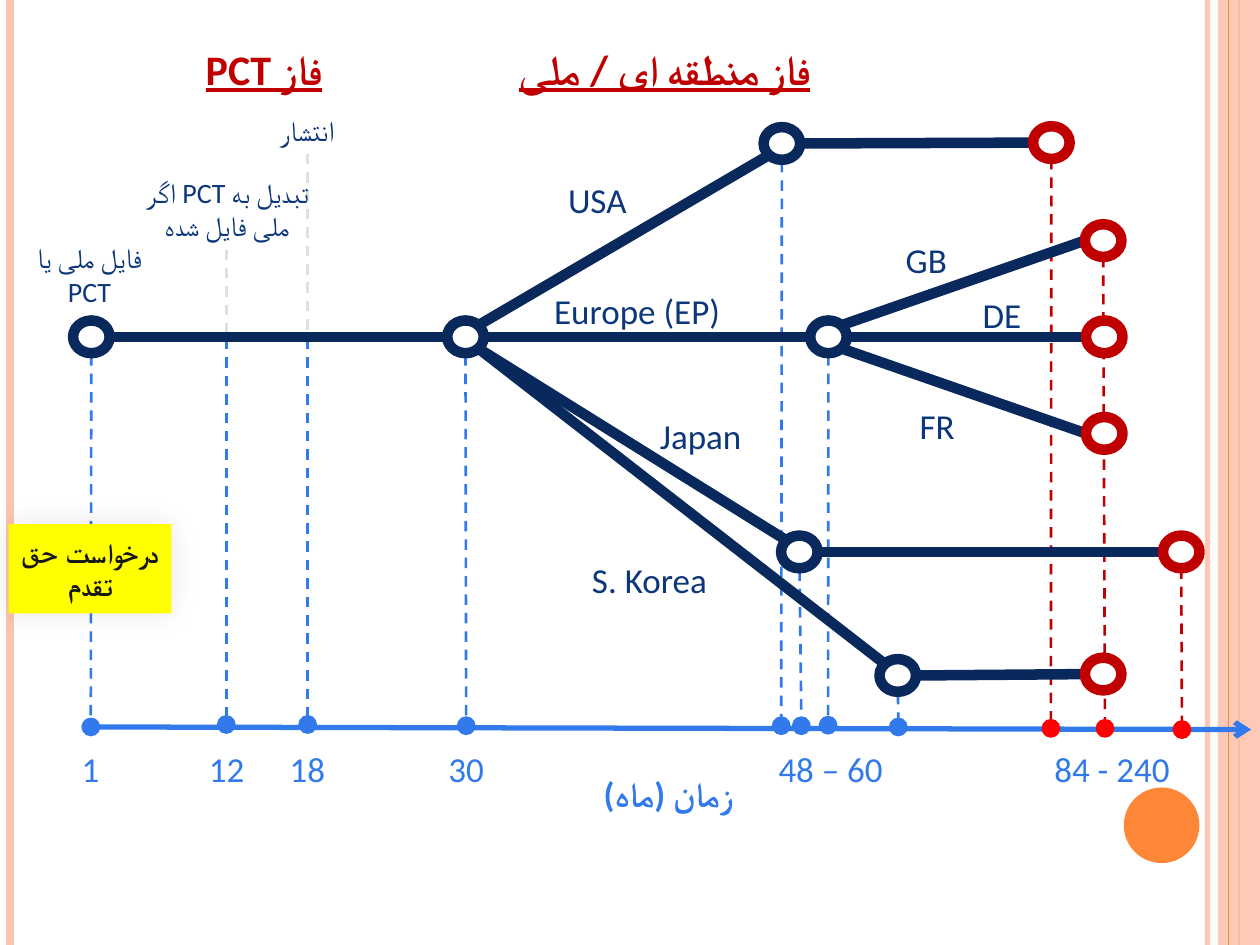
"""Build a PCT patent timeline slide with national branches and a month axis."""
from math import cos, radians, sin
from typing import NamedTuple, Optional

from lxml.etree import SubElement
from pptx import Presentation
from pptx.dml.color import RGBColor
from pptx.enum.dml import MSO_LINE_DASH_STYLE as Dash
from pptx.enum.shapes import MSO_CONNECTOR as Conn, MSO_SHAPE as Geo
from pptx.enum.text import MSO_ANCHOR as Anchor, MSO_AUTO_SIZE as Auto, PP_ALIGN as Align
from pptx.oxml.ns import qn
from pptx.util import Pt

COLORS = {
    "navy": "09295C", "label": "0C377B", "blue": "327AEB", "red": "C00000",
    "dot_red": "FF0000", "grey": "E0E0E0", "white": "FFFFFF", "yellow": "FFFF00",
    "ink": "161616", "peach": "FEC3AE", "orange": "FE8637", "black": "000000",
}
NODE_W, NODE_H, DOT = 20.9, 18.7, 10
LABEL_H, LABEL_PAD, TICK_Y = 31.5, 7.2, 423.4
HEADING = {"size": Pt(24), "bold": True, "underline": True}
NOTE = {"size": Pt(16)}


class Node(NamedTuple):
    x: float
    y: float
    color: str = "navy"


class Link(NamedTuple):
    start: str
    start_angle: float
    end: str
    end_angle: float


class Drop(NamedTuple):
    x: float
    y: float
    dot_x: float
    dot_y: float
    color: str
    dot_color: str


class Label(NamedTuple):
    text: str
    x: float
    y: float
    w: float
    h: float
    color: str
    fmt: dict
    wrap: bool = False
    rtl: bool = False


NODES = {
    "filing": Node(52.2, 192.5), "pct": Node(266, 192.5), "ep": Node(473.4, 192.5),
    "us": Node(446.8, 82), "jp": Node(456.8, 315.4), "kr": Node(513, 386),
    "us_grant": Node(600.8, 81.5, "red"), "gb": Node(630.4, 137.5, "red"),
    "de": Node(631, 192.5, "red"), "fr": Node(631, 247.7, "red"),
    "jp_grant": Node(675, 315.4, "red"), "kr_grant": Node(630.4, 385.2, "red"),
}
LINKS = [
    Link("filing", 0, "pct", 180), Link("pct", 0, "ep", 180),
    Link("pct", 45, "us", 225), Link("pct", -45, "jp", 135), Link("pct", -45, "kr", 135),
    Link("us", 0, "us_grant", 180), Link("ep", 0, "de", 180), Link("ep", 45, "gb", 180),
    Link("ep", -45, "fr", 180), Link("jp", 0, "jp_grant", 180), Link("kr", 0, "kr_grant", 180),
]
DROP_ENDS = {
    "us_grant": (600.5, 416.2), "gb": (631.4, 416.2), "jp_grant": (675.4, 416.9),
    "us": (446.4, 414.7), "ep": (473.2, 414.4), "jp": (457.9, 414.7),
    "kr": (513.3, 415.4), "pct": (266.4, 414.7), "filing": (51.9, 415.4),
}
EVENTS = [(129.3, 142.6), (175.8, 87.8)]


def rgb(name: str) -> RGBColor:
    """Return the named colour."""
    return RGBColor.from_string(COLORS[name])


def set_alpha(fill, percent: float) -> None:
    """Make a solid fill partly transparent."""
    clr = fill._xPr.find(".//" + qn("a:srgbClr"))
    SubElement(clr, qn("a:alpha")).set("val", str(int(percent * 1000)))


def add_line(s, x1: float, y1: float, x2: float, y2: float, color: str, width: float,
             dash: bool = False):
    """Draw a straight line without shadow."""
    c = s.shapes.add_connector(Conn.STRAIGHT, Pt(x1), Pt(y1), Pt(x2), Pt(y2))
    c.line.color.rgb, c.line.width = rgb(color), Pt(width)
    if dash:
        c.line.dash_style = Dash.DASH
    SubElement(c._element.spPr, qn("a:effectLst"))
    return c


def add_block(s, geo, x: float, y: float, w: float, h: float, fill: str,
              line: Optional[str] = None, width: float = 0.75):
    """Draw a filled preset shape."""
    sp = s.shapes.add_shape(geo, Pt(x), Pt(y), Pt(w), Pt(h))
    sp.shadow.inherit = False
    sp.fill.solid()
    sp.fill.fore_color.rgb = rgb(fill)
    if line:
        sp.line.color.rgb, sp.line.width = rgb(line), Pt(width)
    else:
        sp.line.fill.background()
    return sp


def add_round(s, x: float, y: float, w: float, h: float, fill: str, line: str, width: float):
    """Draw an ellipse around a centre."""
    return add_block(s, Geo.OVAL, x - w / 2, y - h / 2, w, h, fill, line, width)


def port(node: Node, angle: float) -> tuple[float, float]:
    """Return the point on a node's rim at an angle in degrees."""
    a = radians(angle)
    return node.x + NODE_W / 2 * cos(a), node.y - NODE_H / 2 * sin(a)


def write(tf, text: str, color: str, fmt: dict, font: str = "Calibri",
          center: bool = False, rtl: bool = False) -> None:
    """Write one formatted paragraph."""
    p = tf.paragraphs[0]
    p.alignment = Align.CENTER if center else Align.LEFT
    if rtl:
        p._p.get_or_add_pPr().set("rtl", "1")
    r = p.add_run()
    r.text = text
    for key, value in {"name": font, **fmt}.items():
        setattr(r.font, key, value)
    r.font.color.rgb = rgb(color)
    SubElement(r._r.get_or_add_rPr(), qn("a:cs")).set("typeface", font)


def add_label(s, label: Label) -> None:
    """Draw a text box."""
    tf = s.shapes.add_textbox(Pt(label.x), Pt(label.y), Pt(label.w), Pt(label.h)).text_frame
    tf.word_wrap, tf.auto_size = label.wrap, Auto.SHAPE_TO_FIT_TEXT
    write(tf, label.text, label.color, label.fmt, center=label.wrap, rtl=label.rtl)


def add_frame(s) -> None:
    """Draw the side bands and the corner disc."""
    set_alpha(add_line(s, 690, 0, 690, 540, "peach", 3).line.fill, 93)
    add_line(s, 5.8, 0, 5.8, 540, "peach", 4.5)
    add_line(s, 708, 0, 708, 540, "orange", 1.5)
    set_alpha(add_block(s, Geo.RECTANGLE, 696, 0, 24, 540, "peach").fill, 87)
    add_line(s, 702, 0, 702, 540, "orange", 0.75)
    add_block(s, Geo.OVAL, 642.2, 450, 43.2, 43.2, "orange")


def add_priority(s) -> None:
    """Draw the yellow priority box with its soft shadow."""
    sp = add_block(s, Geo.RECTANGLE, 5, 299.5, 93, 51, "yellow")
    effects = sp._element.spPr.find(qn("a:effectLst"))
    shadow = SubElement(effects, qn("a:outerShdw"), blurRad=str(Pt(15)), algn="ctr")
    clr = SubElement(shadow, qn("a:srgbClr"), val=COLORS["black"])
    SubElement(clr, qn("a:alpha"), val="10000")
    tf = sp.text_frame
    tf.word_wrap, tf.vertical_anchor = True, Anchor.MIDDLE
    write(tf, "درخواست حق تقدم", "ink", {"size": Pt(16), "bold": True}, "Arial", True)


def main() -> None:
    """Assemble and save the slide."""
    prs = Presentation()
    prs.slide_width, prs.slide_height = Pt(720), Pt(540)
    s = prs.slides.add_slide(prs.slide_layouts[6])
    add_frame(s)

    drops = []
    for name, end in DROP_ENDS.items():
        node = NODES[name]
        granted = node.color == "red"
        x, y = port(node, -90) if granted else (node.x, node.y)
        drops.append(Drop(x, y, *end, "red" if granted else "blue",
                          "dot_red" if granted else "blue"))
    for x, top in EVENTS:
        add_line(s, x, top, x, 192.2, "grey", 1.5, True)
        drops.append(Drop(x, 193.7, x, 414, "blue", "blue"))
    for d in drops:
        add_line(s, d.x, d.y, d.dot_x, d.dot_y - DOT / 2, d.color, 1.5, True)
    for link in LINKS:
        add_line(s, *port(NODES[link.start], link.start_angle),
                 *port(NODES[link.end], link.end_angle), "navy", 6)
    for node in NODES.values():
        add_round(s, node.x, node.y, NODE_W, NODE_H, "white", node.color, 6)

    axis = add_line(s, 46.8, 415.4, 715, 416.9, "blue", 3)
    SubElement(axis.line._get_or_add_ln(), qn("a:tailEnd")).set("type", "arrow")
    for d in drops:
        add_round(s, d.dot_x, d.dot_y, DOT, DOT, d.dot_color, d.dot_color, 0.75)

    body = {"size": Pt(20)}
    countries = [("USA", 317.5, 98.6, 49), ("Europe (EP)", 309.6, 162, 110.9),
                 ("Japan", 370, 233.3, 62), ("S. Korea", 331.2, 315.4, 81.4),
                 ("GB", 510.5, 132.5, 38.2), ("DE", 554.4, 164.2, 36.7),
                 ("FR", 518.4, 227.5, 34.6)]
    ticks = [("1", 39.6, 24.5), ("12", 112.3, 35.3), ("18", 158.4, 35.3), ("30", 249.1, 35.3),
             ("48 – 60", 437.8, 74.9), ("84 - 240", 595.4, 80.6)]
    labels = [Label(t, x, y, w, LABEL_H, "label", body) for t, x, y, w in countries]
    labels += [Label(t, x, TICK_Y, w, LABEL_H, "blue", body) for t, x, w in ticks]
    labels += [
        Label("زمان (ماه)", 334.8, 437.8, 92.9, LABEL_H, "blue", {**body, "bold": True}, True, True),
        Label("انتشار", 118, 61.2, 114.5, 26.6, "label", NOTE, True),
        Label("فاز منطقه ای / ملی", 264.2, 21.6, 231.1, 36, "red", HEADING, True),
        Label("فاز PCT", 91.4, 21.6, 118.8, 36, "red", HEADING, True, True),
        Label("تبدیل به PCT اگر ملی فایل شده", 67.7, 96.5, 124.6, 46, "label", NOTE, True, True),
        Label("فایل ملی یا PCT", 3.6, 133.9, 95, 46, "label", NOTE, True, True),
    ]
    for label in labels:
        add_label(s, label)
    add_priority(s)
    prs.save("out.pptx")


if __name__ == "__main__":
    main()
